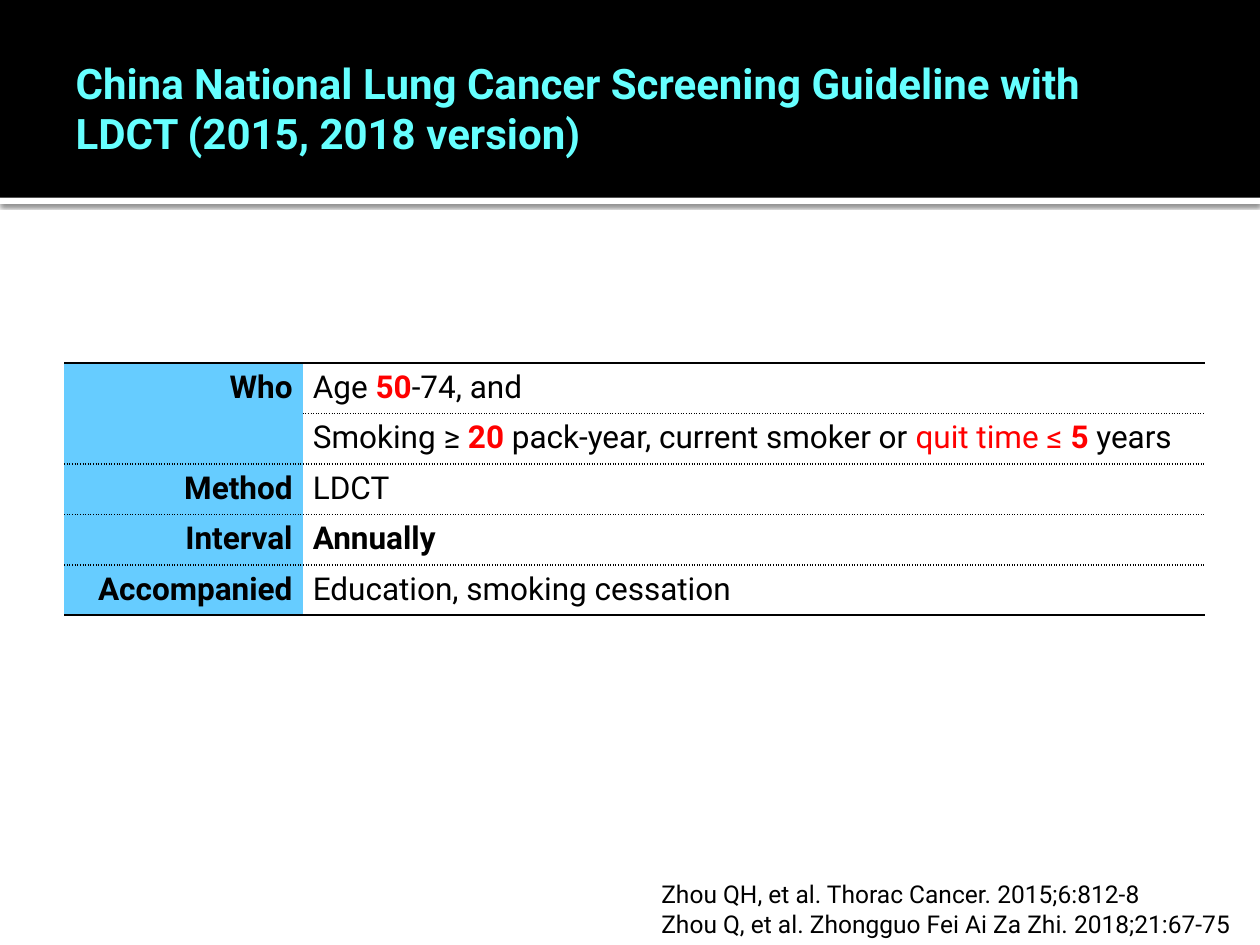
from lxml.etree import SubElement
from pptx import Presentation
from pptx.dml.color import RGBColor
from pptx.enum.shapes import MSO_SHAPE as Shape
from pptx.enum.text import MSO_ANCHOR as Anchor, MSO_AUTO_SIZE as AutoSize, PP_ALIGN as Align
from pptx.oxml import parse_xml
from pptx.oxml.ns import nsdecls, qn
from pptx.util import Pt

FONT = "Roboto"
BLACK, WHITE, RED, CYAN, BLUE = "000000", "FFFFFF", "FF0000", "66FFFF", "66CCFF"

TITLE = "China National Lung Cancer Screening Guideline with LDCT (2015, 2018 version)"
CITATIONS = [
    "Zhou QH, et al. Thorac Cancer. 2015;6:812-8",
    "Zhou Q, et al. Zhongguo Fei Ai Za Zhi. 2018;21:67-75",
]
# Each row: label, then spans of (text, colour, bold)
ROWS = [
    ("Who", [("Age ", BLACK, False), ("50", RED, True), ("-74, and", BLACK, False)]),
    ("", [("Smoking ≥ ", BLACK, False), ("20", RED, True),
          (" pack-year, current smoker or ", BLACK, False),
          ("quit time ≤ ", RED, False), ("5", RED, True), (" years", BLACK, False)]),
    ("Method", [("LDCT", BLACK, False)]),
    ("Interval", [("Annually", BLACK, True)]),
    ("Accompanied", [("Education, smoking cessation", BLACK, False)]),
]
BARS = [(113, 3.6, WHITE), (0, 113, BLACK)]  # top, height, colour
COLUMN_WIDTHS = (136.3, 515.7)
ROW_HEIGHT = 28.8


def color(value):
    return RGBColor.from_string(value)


def write(para, text, size=18, fill=BLACK, bold=False, align=Align.LEFT):
    para.alignment = align
    span = para.add_run()
    span.text = text
    span.font.name, span.font.size, span.font.bold = FONT, Pt(size), bold
    span.font.color.rgb = color(fill)


def set_margins(target, left, right, top=3.6, bottom=3.6):
    target.margin_left, target.margin_right = Pt(left), Pt(right)
    target.margin_top, target.margin_bottom = Pt(top), Pt(bottom)


def set_borders(cell, top, bottom):
    """Draw the top and bottom edges in the given dash style, or none; hide the sides."""
    properties = cell._tc.get_or_add_tcPr()
    edges = [("lnL", None), ("lnR", None), ("lnT", top), ("lnB", bottom)]
    for index, (tag, dash) in enumerate(edges):
        line = parse_xml(f'<a:{tag} {nsdecls("a")} w="{Pt(1)}"/>')
        if dash:
            fill = SubElement(line, qn("a:solidFill"))
            SubElement(fill, qn("a:srgbClr"), val=BLACK)
            SubElement(line, qn("a:prstDash"), val=dash)
        else:
            SubElement(line, qn("a:noFill"))
        properties.insert(index, line)


def add_shadow(shape):
    shape.element.spPr.append(parse_xml(
        f'<a:effectLst {nsdecls("a")}><a:outerShdw blurRad="{Pt(2.5)}" dist="{Pt(0.8)}" '
        f'dir="5400000" algn="tl" rotWithShape="0"><a:srgbClr val="{BLACK}">'
        '<a:alpha val="60000"/></a:srgbClr></a:outerShdw></a:effectLst>'))


def add_header(page):
    title = page.shapes.title
    for top, height, fill in BARS:
        bar = page.shapes.add_shape(Shape.RECTANGLE, 0, Pt(top), Pt(720), Pt(height))
        bar.fill.solid()
        bar.fill.fore_color.rgb = color(fill)
        bar.line.fill.background()
        if fill == WHITE:
            add_shadow(bar)
        else:
            bar.shadow.inherit = False
        title.element.addprevious(bar.element)
    title.left, title.top, title.width, title.height = Pt(36), Pt(12.2), Pt(648), Pt(98.6)
    frame = title.text_frame
    frame.word_wrap, frame.vertical_anchor = True, Anchor.MIDDLE
    frame.auto_size = AutoSize.NONE
    set_margins(frame, 7.2, 3.6)
    write(frame.paragraphs[0], TITLE, size=24, fill=CYAN, bold=True)


def add_citations(page):
    box = page.shapes.add_textbox(Pt(370.8), Pt(499), Pt(349.2), Pt(41))
    frame = box.text_frame
    frame.word_wrap, frame.auto_size = False, AutoSize.SHAPE_TO_FIT_TEXT
    for index, citation in enumerate(CITATIONS):
        para = frame.add_paragraph() if index else frame.paragraphs[0]
        write(para, citation, size=14)


def add_guideline_table(page):
    table = page.shapes.add_table(
        len(ROWS), len(COLUMN_WIDTHS), Pt(36.7), Pt(207.4),
        Pt(sum(COLUMN_WIDTHS)), Pt(ROW_HEIGHT * len(ROWS))).table
    table.first_row = table.horz_banding = False
    for column, width in zip(table.columns, COLUMN_WIDTHS):
        column.width = Pt(width)
    last = len(ROWS) - 1
    for index, (label, spans) in enumerate(ROWS):
        table.rows[index].height = Pt(ROW_HEIGHT)
        name, detail = table.cell(index, 0), table.cell(index, 1)
        name.fill.solid()
        name.fill.fore_color.rgb = color(BLUE)
        detail.fill.background()
        set_margins(name, 2.9, 5.8)
        set_margins(detail, 5.8, 0)
        write(name.text_frame.paragraphs[0], label, bold=True, align=Align.RIGHT)
        for text, fill, bold in spans:
            write(detail.text_frame.paragraphs[0], text, fill=fill, bold=bold)
        top = "sysDot" if index else "solid"
        bottom = "sysDot" if index < last else "solid"
        set_borders(detail, top, bottom)
        # A blank label continues the group above, so no line parts the two
        continued = index < last and not ROWS[index + 1][0]
        set_borders(name, top if label else None, None if continued else bottom)


def main():
    deck = Presentation()
    deck.slide_width, deck.slide_height = Pt(720), Pt(540)
    page = deck.slides.add_slide(deck.slide_layouts[5])
    add_header(page)
    add_citations(page)
    add_guideline_table(page)
    deck.save("out.pptx")


if __name__ == "__main__":
    main()
